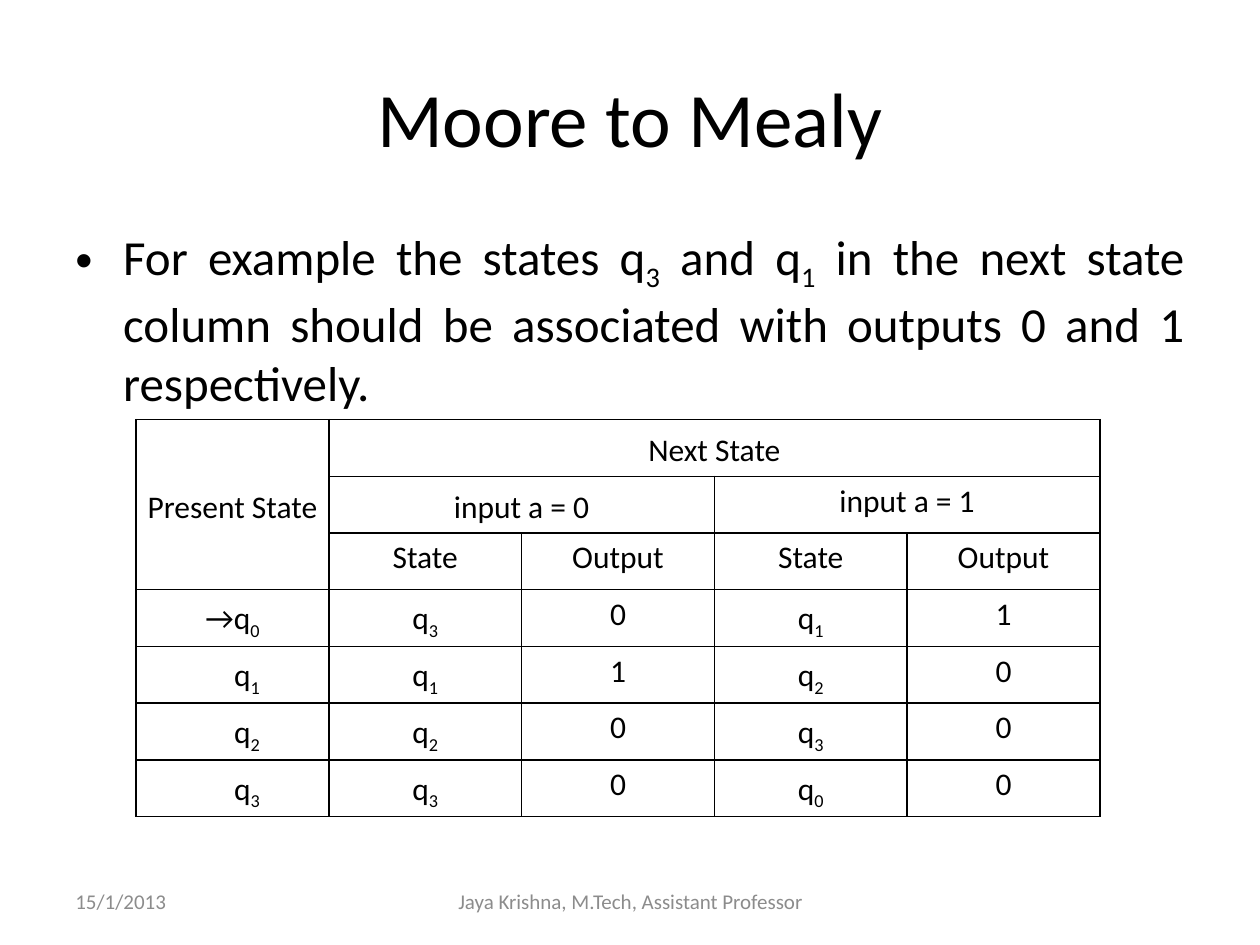
from dataclasses import dataclass

from lxml.etree import SubElement
from pptx import Presentation
from pptx.dml.color import RGBColor
from pptx.enum.text import MSO_ANCHOR, PP_ALIGN
from pptx.oxml.ns import qn
from pptx.util import Inches, Pt

COLORS = {"text": "000000", "footer": "8C8C8C", "border": "000000"}
FONT = "Calibri"
COLUMN_WIDTH, ROW_HEIGHT = 1.53, 0.45
CELL_MARGIN, STATE_INDENT = 0.07, 0.23


@dataclass
class TableCell:
    row: int
    column: int
    text: str
    rows: int = 1
    columns: int = 1
    anchor: MSO_ANCHOR = MSO_ANCHOR.TOP
    indent: float = 0


def write_text(frame, text: str, *, size: float, color: str = "text",
               align: PP_ALIGN = PP_ALIGN.CENTER, line_spacing: float = 1.0):
    paragraph = frame.paragraphs[0]
    paragraph.alignment = align
    paragraph.line_spacing = line_spacing
    first, *rest = text.split("_")
    pieces = [(first, False)]
    for part in rest:
        pieces += [(part[0], True), (part[1:], False)]
    for piece, subscript in pieces:
        if not piece:
            continue
        run = paragraph.add_run()
        run.text = piece
        run.font.name = FONT
        run.font.size = Pt(size)
        run.font.color.rgb = RGBColor.from_string(COLORS[color])
        if subscript:
            run._r.get_or_add_rPr().set("baseline", "-25000")
    return paragraph


def add_text(slide, text: str, left: float, top: float, width: float, height: float,
             anchor: MSO_ANCHOR = MSO_ANCHOR.MIDDLE, **text_format):
    shape = slide.shapes.add_textbox(Inches(left), Inches(top), Inches(width), Inches(height))
    frame = shape.text_frame
    frame.word_wrap = True
    frame.vertical_anchor = anchor
    return write_text(frame, text, **text_format)


def add_bullet(paragraph, indent: float) -> None:
    properties = paragraph._p.get_or_add_pPr()
    properties.set("marL", str(Inches(indent)))
    properties.set("indent", str(-Inches(indent)))
    SubElement(properties, qn("a:buFont"), typeface="Arial")
    SubElement(properties, qn("a:buChar"), char="•")


def style_cell(cell) -> None:
    properties = cell._tc.get_or_add_tcPr()
    for side in ("lnL", "lnR", "lnT", "lnB"):
        line = SubElement(properties, qn(f"a:{side}"), w=str(Pt(1)))
        fill = SubElement(line, qn("a:solidFill"))
        SubElement(fill, qn("a:srgbClr"), val=COLORS["border"])
    cell.fill.background()
    cell.margin_left = cell.margin_right = Inches(CELL_MARGIN)
    cell.margin_top = cell.margin_bottom = 0


def table_cells() -> list[TableCell]:
    middle = MSO_ANCHOR.MIDDLE
    cells = [
        TableCell(0, 0, "Present State", rows=3, anchor=middle),
        TableCell(0, 1, "Next State", columns=4, anchor=middle),
        TableCell(1, 1, "input a = 0", columns=2, anchor=middle),
        TableCell(1, 3, "input a = 1", columns=2),
    ]
    cells += [TableCell(2, column, text)
              for column, text in enumerate(["State", "Output"] * 2, start=1)]
    transitions = [
        ("→q_0", "q_3", "0", "q_1", "1"),
        ("q_1", "q_1", "1", "q_2", "0"),
        ("q_2", "q_2", "0", "q_3", "0"),
        ("q_3", "q_3", "0", "q_0", "0"),
    ]
    for row, values in enumerate(transitions, start=3):
        for column, text in enumerate(values):
            anchor = middle if "q" in text else MSO_ANCHOR.TOP
            indent = STATE_INDENT if column == 0 and row > 3 else 0
            cells.append(TableCell(row, column, text, anchor=anchor, indent=indent))
    return cells


def add_state_table(slide, left: float, top: float, rows: int, columns: int) -> None:
    table = slide.shapes.add_table(
        rows, columns, Inches(left), Inches(top),
        Inches(columns * COLUMN_WIDTH), Inches(rows * ROW_HEIGHT)).table
    table.first_row = table.horz_banding = False
    for column in table.columns:
        column.width = Inches(COLUMN_WIDTH)
    for row in table.rows:
        row.height = Inches(ROW_HEIGHT)
    for cell in table.iter_cells():
        style_cell(cell)
    for item in table_cells():
        cell = table.cell(item.row, item.column)
        if item.rows * item.columns > 1:
            cell.merge(table.cell(item.row + item.rows - 1, item.column + item.columns - 1))
        cell.vertical_anchor = item.anchor
        cell.margin_left = Inches(CELL_MARGIN + item.indent)
        write_text(cell.text_frame, item.text, size=18, line_spacing=1.15)


def main() -> None:
    presentation = Presentation()
    presentation.slide_width, presentation.slide_height = Inches(10), Inches(7.5)
    slide = presentation.slides.add_slide(presentation.slide_layouts[6])
    add_text(slide, "Moore to Mealy", 0.5, 0.3, 9, 1.25, size=44)
    body = add_text(
        slide,
        "For example the states q_3 and q_1 in the next state column should be "
        "associated with outputs 0 and 1 respectively.",
        0.5, 1.75, 9, 1.67, anchor=MSO_ANCHOR.TOP, size=28, align=PP_ALIGN.JUSTIFY)
    body.space_before = Pt(5.6)
    add_bullet(body, 0.38)
    add_text(slide, "15/1/2013", 0.5, 6.95, 2.33, 0.4,
             size=12, color="footer", align=PP_ALIGN.LEFT)
    add_text(slide, "Jaya Krishna, M.Tech, Assistant Professor", 3.42, 6.95, 3.17, 0.4,
             size=12, color="footer")
    add_state_table(slide, 1.08, 3.33, rows=7, columns=5)
    presentation.save("out.pptx")


if __name__ == "__main__":
    main()
